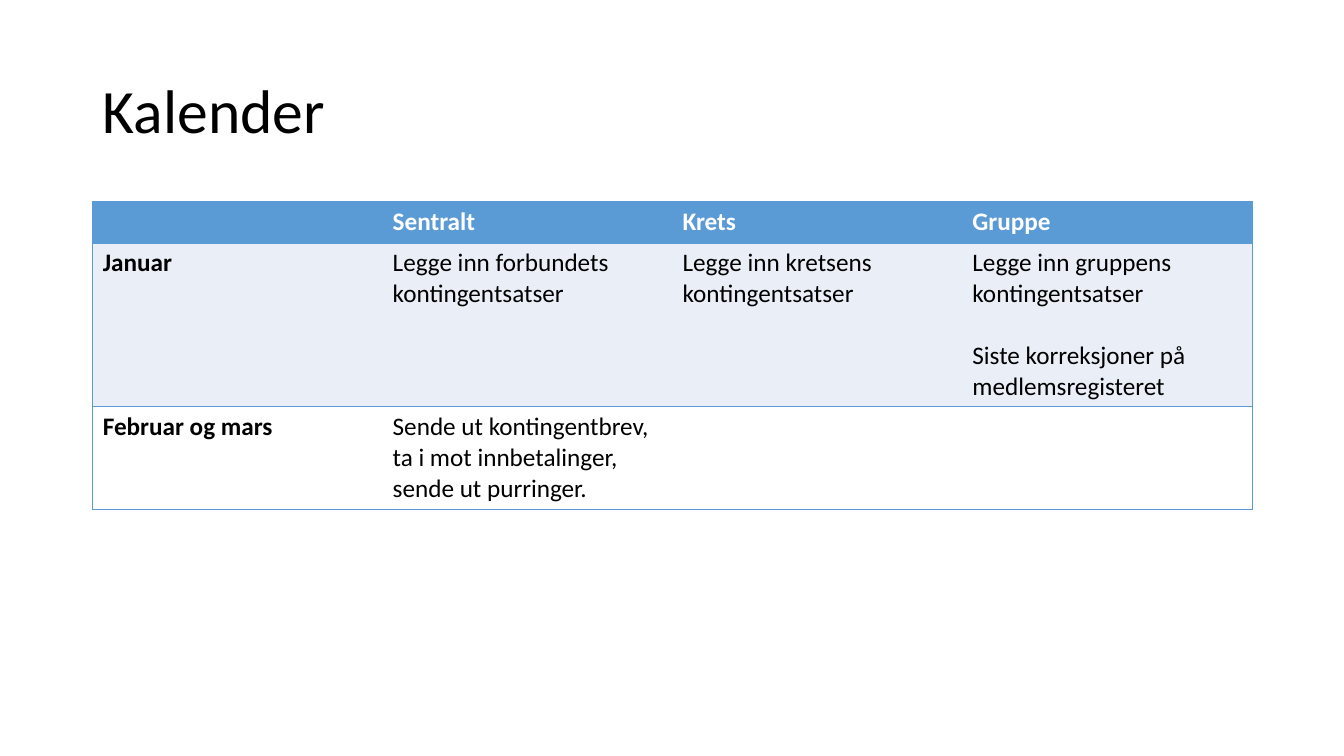
from dataclasses import dataclass

from lxml.etree import SubElement
from pptx import Presentation
from pptx.dml.color import RGBColor
from pptx.enum.text import MSO_ANCHOR, PP_ALIGN
from pptx.oxml.ns import qn
from pptx.util import Inches, Pt


@dataclass(frozen=True)
class Theme:
    font: str = "Calibri"
    title_size: int = 44
    cell_size: int = 18
    text: str = "000000"
    header_text: str = "FFFFFF"
    accent: str = "5B9BD5"
    band: str = "EAEFF7"
    plain: str = "FFFFFF"
    border_width: int = 1
    paragraph_gap: int = 22


THEME = Theme()

# Each cell is a list of paragraphs
CALENDAR = [
    [[], ["Sentralt"], ["Krets"], ["Gruppe"]],
    [
        ["Januar"],
        ["Legge inn forbundets kontingentsatser"],
        ["Legge inn kretsens kontingentsatser"],
        ["Legge inn gruppens kontingentsatser", "Siste korreksjoner på medlemsregisteret"],
    ],
    [
        ["Februar og mars"],
        ["Sende ut kontingentbrev, ta i mot innbetalinger, sende ut purringer."],
        [],
        [],
    ],
]
ROW_HEIGHTS = [0.41, 1.62, 1.02]


def style_font(font, size, color, bold=False):
    font.name = THEME.font
    font.size = Pt(size)
    font.bold = bold
    font.color.rgb = RGBColor.from_string(color)


def set_borders(cell, visible_sides):
    properties = cell._tc.get_or_add_tcPr()
    for side in "LRTB":
        line = SubElement(properties, qn(f"a:ln{side}"), w=str(Pt(THEME.border_width)))
        if side in visible_sides:
            fill = SubElement(line, qn("a:solidFill"))
            SubElement(fill, qn("a:srgbClr"), val=THEME.accent)
        else:
            SubElement(line, qn("a:noFill"))


def fill_cell(cell, paragraphs, background, color, bold):
    cell.fill.solid()
    cell.fill.fore_color.rgb = RGBColor.from_string(background)
    cell.text_frame.text = "\n".join(paragraphs)
    for index, paragraph in enumerate(cell.text_frame.paragraphs):
        if index:
            paragraph.space_before = Pt(THEME.paragraph_gap)
        style_font(paragraph.font, THEME.cell_size, color, bold)
        for run in paragraph.runs:
            style_font(run.font, THEME.cell_size, color, bold)


def add_heading(slide, left, top, width, height):
    heading = slide.shapes.title
    heading.left, heading.top = Inches(left), Inches(top)
    heading.width, heading.height = Inches(width), Inches(height)
    frame = heading.text_frame
    frame.text = "Kalender"
    frame.word_wrap = True
    frame.vertical_anchor = MSO_ANCHOR.MIDDLE
    paragraph = frame.paragraphs[0]
    paragraph.alignment = PP_ALIGN.LEFT
    paragraph.line_spacing = 0.9
    style_font(paragraph.runs[0].font, THEME.title_size, THEME.text)


def add_calendar(slide, left, top, width):
    column_count = len(CALENDAR[0])
    calendar = slide.shapes.add_table(
        len(CALENDAR), column_count,
        Inches(left), Inches(top), Inches(width), Inches(sum(ROW_HEIGHTS)),
    ).table
    calendar.horz_banding = False
    for column in calendar.columns:
        column.width = Inches(width / column_count)

    backgrounds = [THEME.accent, THEME.band, THEME.plain]
    for row_index, entries in enumerate(CALENDAR):
        calendar.rows[row_index].height = Inches(ROW_HEIGHTS[row_index])
        is_header = row_index == 0
        color = THEME.header_text if is_header else THEME.text
        for column_index, paragraphs in enumerate(entries):
            cell = calendar.cell(row_index, column_index)
            # Horizontal rules throughout, vertical rules on the outside only
            sides = "TB"
            if column_index == 0:
                sides += "L"
            if column_index == column_count - 1:
                sides += "R"
            set_borders(cell, sides)
            fill_cell(cell, paragraphs, backgrounds[row_index], color,
                      bold=is_header or column_index == 0)


def main():
    presentation = Presentation()
    presentation.slide_width = Inches(13.33)
    presentation.slide_height = Inches(7.5)
    slide = presentation.slides.add_slide(presentation.slide_layouts[5])
    add_heading(slide, 0.92, 0.4, 11.5, 1.45)
    add_calendar(slide, 0.92, 2, 11.5)
    presentation.save("out.pptx")


if __name__ == "__main__":
    main()
